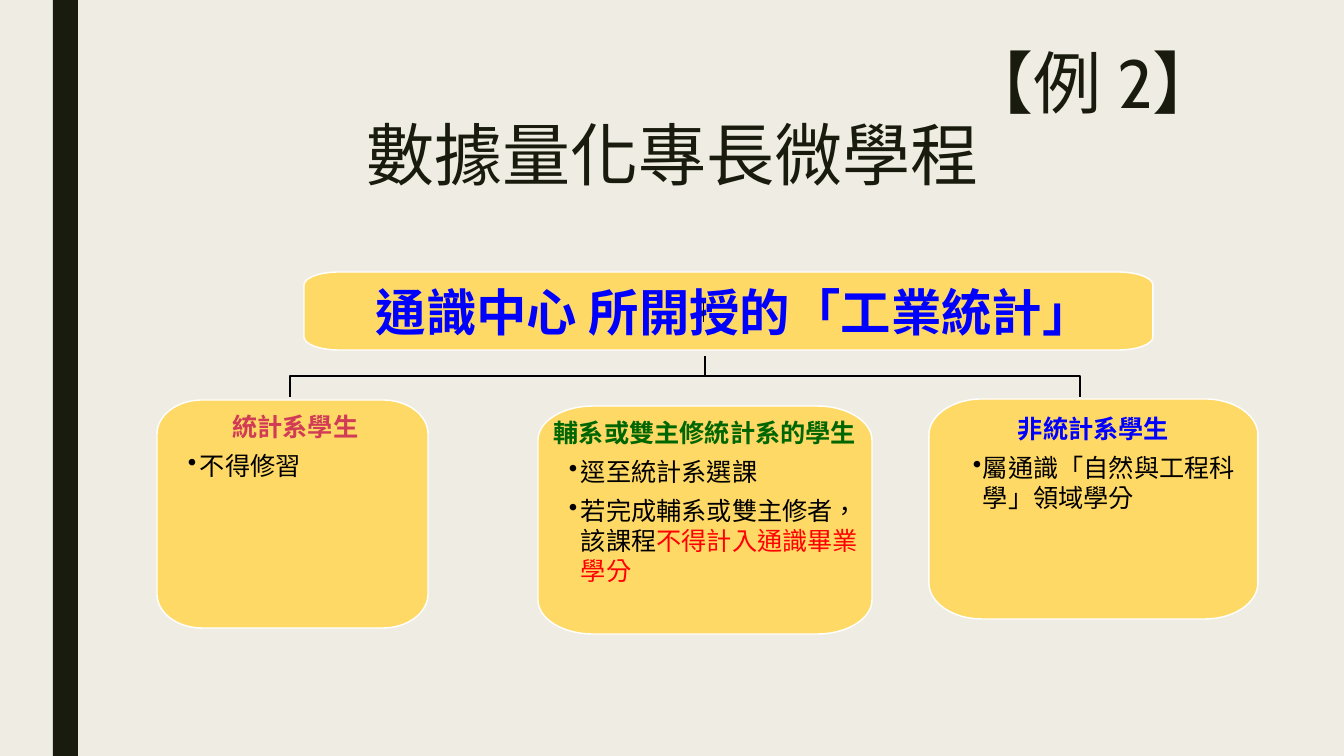
from pptx import Presentation
from pptx.dml.color import RGBColor
from pptx.enum.lang import MSO_LANGUAGE_ID as LANG
from pptx.enum.shapes import MSO_CONNECTOR as CONN, MSO_SHAPE as SHAPE
from pptx.enum.text import MSO_ANCHOR as ANCHOR, MSO_AUTO_SIZE as AUTO, PP_ALIGN as ALIGN
from pptx.oxml.ns import qn
from pptx.util import Emu, Pt
from lxml.etree import SubElement

BG, DARK, YELLOW, WHITE, BLACK = "EFEDE3", "191B0E", "FFD966", "FFFFFF", "000000"
BLUE, GREEN, PINK, RED = "0000FF", "006600", "D13B56", "FF0000"
SERIF, SANS, CABIN = "Times New Roman", "Noto Sans CJK SC", "Cabin"

TITLE = [("【例 2】", ALIGN.RIGHT, 0), ("數據量化專長微學程", ALIGN.LEFT, 166)]
COURSE = {"box": (304, 272, 849, 78), "corner": (35, 13), "inset": 6, "size": 36,
          "head": (" 通識中心 所開授的「工業統計」", BLUE, SANS), "hang": (0, 0), "points": []}
GROUPS = [
    {"box": (157, 400, 271, 228), "corner": (45, 34), "inset": 11, "size": 18,
     "head": (" 統計系學生", PINK, SERIF), "hang": (32, 12),
     "points": [[("不得修習", BLACK, SERIF)]]},
    {"box": (929, 399, 329, 220), "corner": (53, 36), "inset": 14, "size": 18,
     "head": ("非統計系學生", BLUE, SERIF), "hang": (40, 10),
     "points": [[("屬通識", BLACK, SERIF), ("「自然與工程科學」領域學分", BLACK, SANS)]]},
    {"box": (538, 406, 334, 228), "corner": (55, 34), "inset": 11, "size": 18,
     "head": ("輔系或雙主修統計系的學生", GREEN, SERIF), "hang": (32, 12),
     "points": [[("逕至統計系選課", BLACK, SERIF)],
                [("若完成輔系或雙主修者，該課程", BLACK, SERIF),
                 ("不得計入通識畢業學分", RED, SERIF)]]},
]
TRUNK, BRANCHES, LEVELS = 705, (1080, 290), (356, 376, 397)


def px(n):
    return Emu(round(n * 914400 / 100.8))


def rgb(color):
    return RGBColor.from_string(color)


def style(r, size, color, font, east, bold=False):
    r.font.size, r.font.bold, r.font.name = Pt(size), bold, font
    r.font.color.rgb = rgb(color)
    r.font.language_id = LANG.TAIWAN if hasattr(LANG, "TAIWAN") else LANG.TRADITIONAL_CHINESE
    SubElement(r._r.get_or_add_rPr(), qn("a:ea"), typeface=east)


def outline(s, color, width):
    s.line.color.rgb, s.line.width = rgb(color), Pt(width)


def freeform(slide, points, close):
    spots = [(round(x * 10), round(y * 10)) for x, y in points]
    fb = slide.shapes.build_freeform(*spots[0], scale=914400 / 1008)
    fb.add_line_segments(spots[1:], close=close)
    s = fb.convert_to_shape()
    s.shadow.inherit = False
    return s


def rounded(slide, box, corner):
    """Draw a box whose four elliptical corners are Bézier curves."""
    x, y, w, h = box
    rx, ry = corner
    points = []
    for i, (cx, cy, dx, dy) in enumerate([(x, y, 1, 1), (x + w, y, -1, 1),
                                          (x + w, y + h, -1, -1), (x, y + h, 1, -1)]):
        side = [(cx, cy + dy * ry * t) for t in (1, 0.45)]
        flat = [(cx + dx * rx * t, cy) for t in (0.45, 1)]
        arc = side + flat
        points += arc[::-1] if i % 2 else arc
    s = freeform(slide, points, True)
    lines = list(s._element.iter(qn("a:lnTo")))
    for i in range(0, 16, 4):
        first, *others = lines[i:i + 3]
        first.tag = qn("a:cubicBezTo")
        for line in others:
            first.append(line[0])
            line.getparent().remove(line)
    return s


def add_box(slide, item):
    s = rounded(slide, item["box"], item["corner"])
    s.fill.solid()
    s.fill.fore_color.rgb = rgb(YELLOW)
    outline(s, WHITE, 1)
    tf = s.text_frame
    tf.word_wrap = True
    tf.vertical_anchor = ANCHOR.TOP if item["points"] else ANCHOR.MIDDLE
    tf.margin_left = tf.margin_right = tf.margin_top = tf.margin_bottom = px(item["inset"])
    for i, runs in enumerate([[item["head"]]] + item["points"]):
        p = tf.add_paragraph() if i else tf.paragraphs[0]
        p.alignment = ALIGN.LEFT if i else ALIGN.CENTER
        p.space_after = Pt(6.3)
        if i:
            left, hang = item["hang"]
            pPr = p._p.get_or_add_pPr()
            pPr.set("marL", str(px(left)))
            pPr.set("indent", str(-px(hang)))
            SubElement(pPr, qn("a:buChar"), char="•")
        for text, color, font in runs:
            r = p.add_run()
            r.text = text
            style(r, item["size"], color, font, SANS, bold=not i)


def add_title(slide):
    s = slide.shapes.title
    s.left, s.top, s.width, s.height = px(190), px(45), px(1059), px(163)
    tf = s.text_frame
    tf.text = "\n".join(text for text, _, _ in TITLE)
    tf.auto_size, tf.vertical_anchor, tf.word_wrap = AUTO.NONE, ANCHOR.TOP, True
    tf.margin_left, tf.margin_right, tf.margin_top = px(10), px(28), px(5)
    for p, (_, align, left) in zip(tf.paragraphs, TITLE):
        p.alignment, p.line_spacing, p.space_before = align, 0.89, Pt(0)
        p._p.get_or_add_pPr().set("marL", str(px(left)))
        style(p.runs[0], 48.6, DARK, CABIN, CABIN)


def main():
    prs = Presentation()
    prs.slide_width, prs.slide_height = px(1344), px(756)
    slide = prs.slides.add_slide(prs.slide_layouts[5])
    slide.background.fill.solid()
    slide.background.fill.fore_color.rgb = rgb(BG)

    bar = slide.shapes.add_shape(SHAPE.RECTANGLE, px(53), 0, px(25), px(756))
    bar.shadow.inherit = False
    bar.fill.solid()
    bar.fill.fore_color.rgb = rgb(DARK)
    bar.line.fill.background()
    add_title(slide)

    top, rail, bottom = LEVELS
    for x in BRANCHES:
        s = freeform(slide, [(TRUNK, top), (TRUNK, rail), (x, rail), (x, bottom)], False)
        s.fill.background()
        outline(s, BLACK, 1)
    for item in [COURSE] + GROUPS:
        add_box(slide, item)

    tick = slide.shapes.add_connector(CONN.STRAIGHT, px(703), px(302), px(703), px(322))
    outline(tick, BLACK, 0.5)
    SubElement(tick._element.spPr, qn("a:effectLst"))
    prs.save("out.pptx")


if __name__ == "__main__":
    main()
